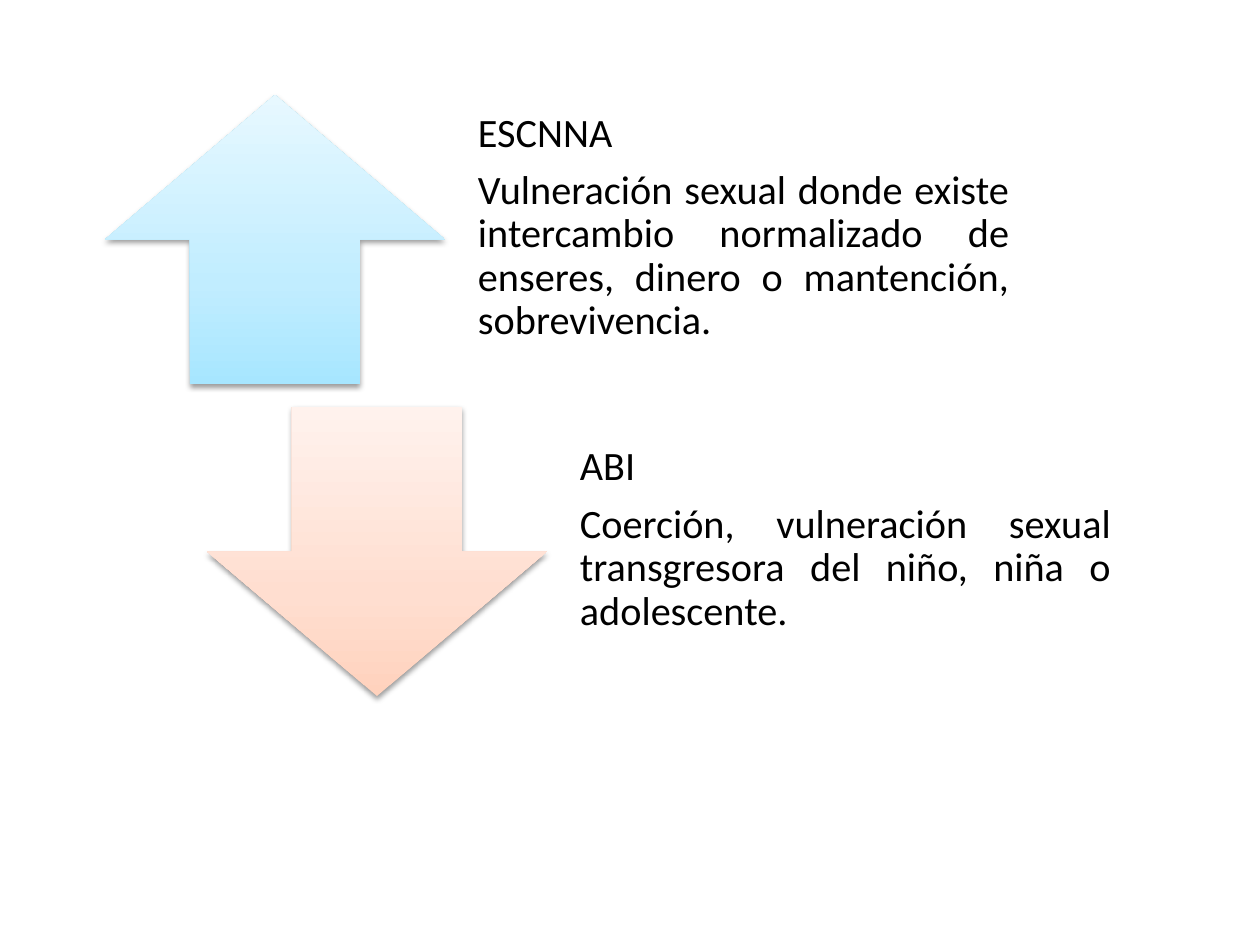
from lxml import etree
from pptx import Presentation
from pptx.dml.color import RGBColor
from pptx.enum.shapes import MSO_SHAPE
from pptx.enum.text import MSO_ANCHOR, PP_ALIGN
from pptx.oxml import parse_xml
from pptx.oxml.ns import nsdecls
from pptx.util import Pt

UP_ARROW = MSO_SHAPE.UP_ARROW
DOWN_ARROW = MSO_SHAPE.DOWN_ARROW
MIDDLE = MSO_ANCHOR.MIDDLE
JUSTIFY = PP_ALIGN.JUSTIFY

PX = 914400 / 126
THEME = {
    "font": "Calibri",
    "size": 23,
    "text": "000000",
    "shadow": "000000",
    "blue": ("A7E6FF", "C1EDFF", "E7F8FF"),
    "orange": ("FFD2BD", "FFDED0", "FFF2ED"),
}
STOPS = (0, 35, 100)
ARROW_WIDTH, TEXT_WIDTH, HEIGHT = 340, 578, 289
TEXT_OFFSET = 350
INSET = 23


def px(value):
    return round(value * PX)


def add_text(slide, text, left, top, width, height, *, size, color, font):
    """Add a justified text box with one paragraph per line of text."""
    box = slide.shapes.add_textbox(px(left), px(top), px(width), px(height))
    frame = box.text_frame
    frame.word_wrap = True
    frame.vertical_anchor = MIDDLE
    frame.margin_left = frame.margin_right = frame.margin_bottom = px(INSET)
    frame.margin_top = 0
    frame.text = text
    for paragraph in frame.paragraphs:
        paragraph.alignment = JUSTIFY
        paragraph.line_spacing = 0.9
        paragraph.space_after = Pt(round(size * 0.35))
        paragraph.font.name = font
        paragraph.font.size = Pt(size)
        paragraph.font.color.rgb = RGBColor.from_string(color)


presentation = Presentation()
presentation.slide_width = px(1260)
presentation.slide_height = px(945)
slide = presentation.slides.add_slide(presentation.slide_layouts[6])

concepts = [
    (UP_ARROW, "blue", 105, 95,
     "ESCNNA\nVulneración sexual donde existe intercambio normalizado de "
     "enseres, dinero o mantención, sobrevivencia."),
    (DOWN_ARROW, "orange", 207, 407,
     "ABI\nCoerción, vulneración sexual transgresora del niño, niña o "
     "adolescente."),
]

for arrow_kind, palette, left, top, text in concepts:
    arrow = slide.shapes.add_shape(
        arrow_kind, px(left), px(top), px(ARROW_WIDTH), px(HEIGHT))
    properties = arrow.element.spPr
    stops = "".join(
        f'<a:gs pos="{stop * 1000}"><a:srgbClr val="{color}"/></a:gs>'
        for stop, color in zip(STOPS, THEME[palette]))
    properties.append(parse_xml(
        f'<a:gradFill {nsdecls("a")} rotWithShape="1"><a:gsLst>{stops}</a:gsLst>'
        '<a:lin ang="16200000" scaled="0"/></a:gradFill>'))
    arrow.line.fill.background()
    arrow.shadow.inherit = False
    effects = properties[-1]
    shadow = parse_xml(
        f'<a:outerShdw {nsdecls("a")} blurRad="{Pt(3.1)}" dist="{Pt(1.6)}" '
        'dir="5400000" rotWithShape="0">'
        f'<a:srgbClr val="{THEME["shadow"]}"/></a:outerShdw>')
    etree.SubElement(shadow[0], shadow[0].tag.replace("srgbClr", "alpha"), val="38000")
    effects.append(shadow)

    add_text(slide, text, left + TEXT_OFFSET, top, TEXT_WIDTH, HEIGHT,
             size=THEME["size"], color=THEME["text"], font=THEME["font"])

presentation.save("out.pptx")
